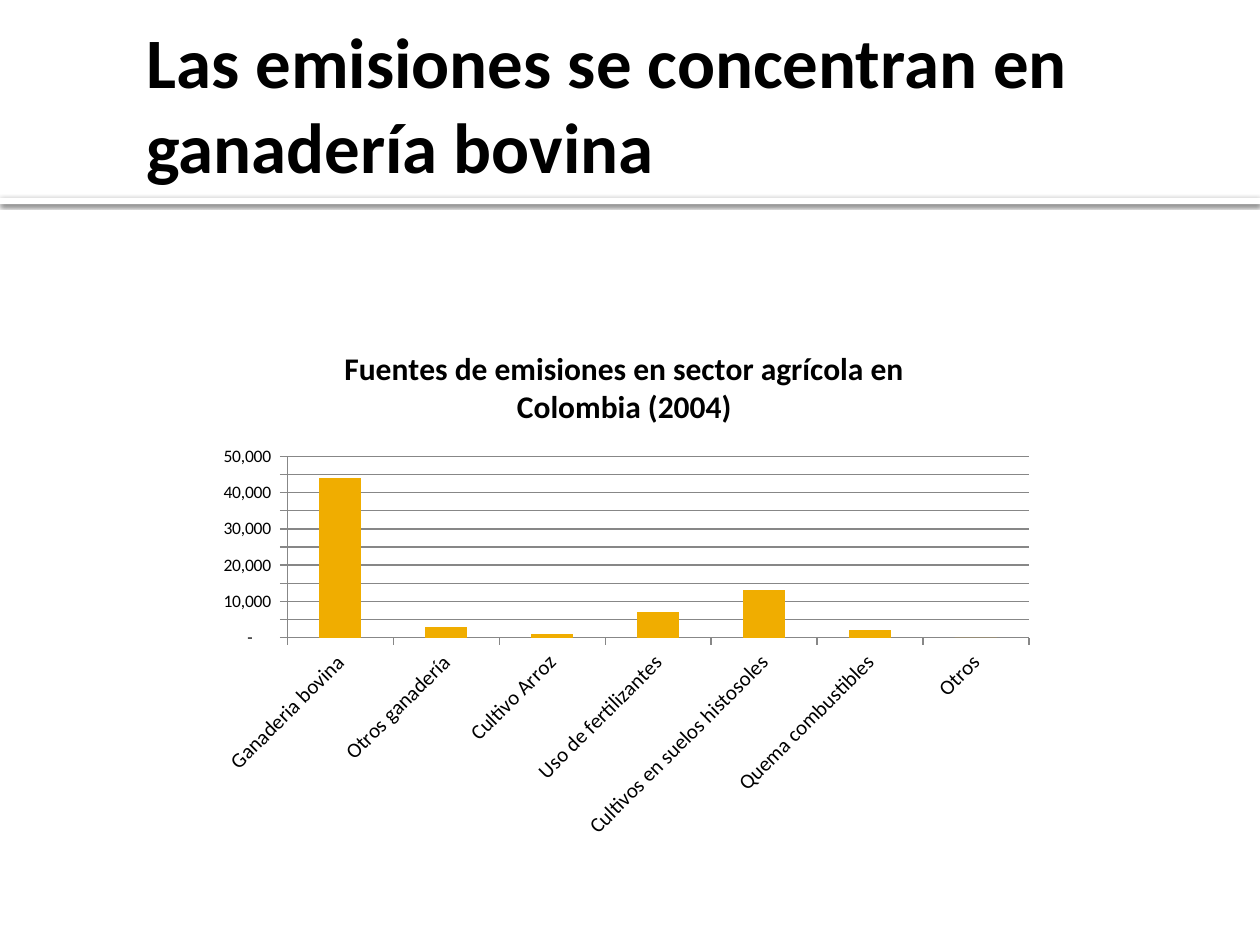
from lxml import etree
from pptx import Presentation
from pptx.chart.data import CategoryChartData
from pptx.dml.color import RGBColor
from pptx.enum.chart import XL_CHART_TYPE, XL_TICK_MARK
from pptx.enum.shapes import MSO_SHAPE
from pptx.enum.text import MSO_ANCHOR, MSO_AUTO_SIZE, PP_ALIGN
from pptx.oxml import parse_xml
from pptx.oxml.ns import nsdecls
from pptx.util import Inches, Pt

BLACK = RGBColor(0x00, 0x00, 0x00)
WHITE = RGBColor(0xFF, 0xFF, 0xFF)
GREY = RGBColor(0x87, 0x87, 0x87)
AMBER = RGBColor(0xF0, 0xAD, 0x00)
FONT = "Calibri"


def set_font(font, size, bold=False):
    font.name = FONT
    font.size = Pt(size)
    font.bold = bold
    font.color.rgb = BLACK


prs = Presentation()
prs.slide_width, prs.slide_height = Inches(10), Inches(7.5)
s = prs.slides.add_slide(prs.slide_layouts[5])

# Divider band with a soft shadow below the title
band = s.shapes.add_shape(MSO_SHAPE.RECTANGLE, 0, Inches(1.57), Inches(10), Inches(0.05))
band.fill.solid()
band.fill.fore_color.rgb = WHITE
band.line.fill.background()
band._element.spPr.append(parse_xml(
    f'<a:effectLst {nsdecls("a")}>'
    f'<a:outerShdw blurRad="{Pt(2.5)}" dist="{Pt(0.8)}" dir="5400000" algn="tl" rotWithShape="0">'
    '<a:srgbClr val="000000"><a:alpha val="60000"/></a:srgbClr>'
    '</a:outerShdw></a:effectLst>'))

# Title
title = s.shapes.title
title.left, title.top = Inches(1.06), Inches(0.13)
title.width, title.height = Inches(8.17), Inches(1.37)
tf = title.text_frame
tf.text = "Las emisiones se concentran en ganadería bovina"
tf.word_wrap = True
tf.auto_size = MSO_AUTO_SIZE.NONE
tf.vertical_anchor = MSO_ANCHOR.MIDDLE
tf.margin_left = Inches(0.1)
tf.margin_top = tf.margin_right = tf.margin_bottom = Inches(0.05)
p = tf.paragraphs[0]
p.alignment = PP_ALIGN.LEFT
set_font(p.font, 40.5, bold=True)

# Emissions chart
data = CategoryChartData()
data.categories = ["Ganaderia bovina", "Otros ganadería", "Cultivo Arroz",
                   "Uso de fertilizantes", "Cultivos en suelos histosoles",
                   "Quema combustibles", "Otros"]
data.add_series("Series 1", [44000, 3000, 1000, 7000, 13000, 2000, 0])
chart = s.shapes.add_chart(XL_CHART_TYPE.COLUMN_CLUSTERED, Inches(1.61), Inches(2.57),
                           Inches(6.69), Inches(4.17), data).chart
set_font(chart.font, 10)
chart.has_legend = False
chart.has_title = True
tf = chart.chart_title.text_frame
tf.text = "Fuentes de emisiones en sector agrícola en Colombia (2004)"
set_font(tf.paragraphs[0].font, 18, bold=True)
chart.chart_title.include_in_layout = False

plot = chart.plots[0]
plot.vary_by_categories = False
plot.gap_width = 150
fill = plot.series[0].format.fill
fill.solid()
fill.fore_color.rgb = AMBER

cat_axis, val_axis = chart.category_axis, chart.value_axis
for axis, size in ((cat_axis, 12), (val_axis, 10)):
    set_font(axis.tick_labels.font, size)
    axis.major_tick_mark = XL_TICK_MARK.OUTSIDE
    axis.format.line.color.rgb = GREY
cat_axis._element.txPr.bodyPr.set("rot", "-2700000")

val_axis.minimum_scale, val_axis.maximum_scale = 0, 50000
val_axis.major_unit = 5000
val_axis.has_major_gridlines = True
val_axis.major_gridlines.format.line.color.rgb = GREY
val_axis.tick_labels.number_format = '_(* #,##0_);_(* \\(#,##0\\);_(* "-"??_);_('
val_axis.tick_labels.number_format_is_linked = False

prs.save("out.pptx")
